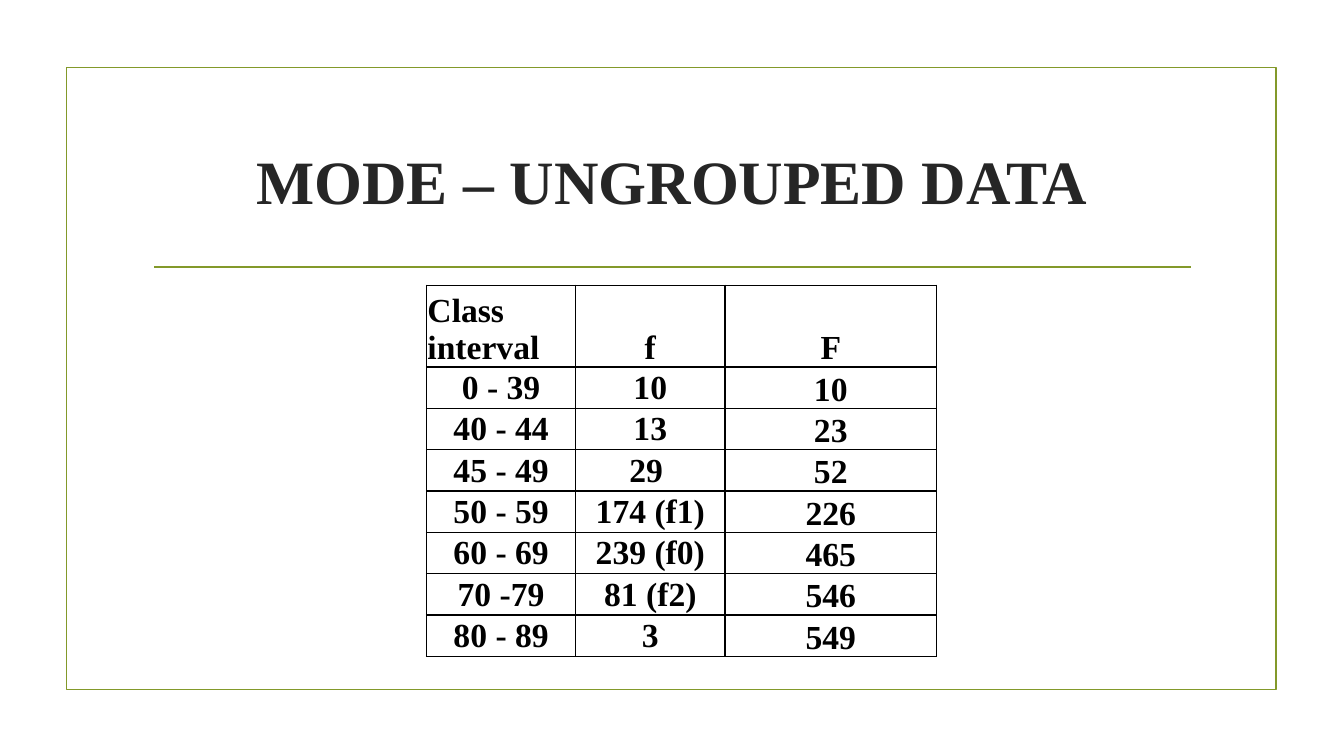
from dataclasses import dataclass

from lxml import etree
from pptx import Presentation
from pptx.dml.color import RGBColor
from pptx.enum.shapes import MSO_CONNECTOR, MSO_SHAPE
from pptx.enum.text import MSO_ANCHOR, PP_ALIGN
from pptx.oxml import parse_xml
from pptx.oxml.ns import nsdecls, qn
from pptx.util import Inches, Pt

RECT = MSO_SHAPE.RECTANGLE
STRAIGHT = MSO_CONNECTOR.STRAIGHT
MIDDLE, BOTTOM = MSO_ANCHOR.MIDDLE, MSO_ANCHOR.BOTTOM
LEFT, CENTER = PP_ALIGN.LEFT, PP_ALIGN.CENTER


@dataclass(frozen=True)
class Theme:
    font: str = "Times New Roman"
    accent: str = "83992A"
    title: str = "262626"
    ink: str = "000000"
    title_size: float = 44
    cell_size: float = 24
    rule_width: float = 1.25
    border_width: float = 1


HEADER = ("Class interval", "f", "F")
ROWS = (
    ("0 - 39", "10", "10"),
    ("40 - 44", "13", "23"),
    ("45 - 49", "29 ", "52"),
    ("50 - 59", "174 (f1)", "226"),
    ("60 - 69", "239 (f0)", "465"),
    ("70 -79", "81 (f2)", "546"),
    ("80 - 89", "3", "549"),
)
COLUMN_WIDTHS = (1.48, 1.48, 2.1)
HEADER_HEIGHT, ROW_HEIGHT = 0.81, 0.41


class SlideBuilder:
    def __init__(self, s, theme):
        self.s = s
        self.theme = theme

    def _line(self, line):
        line.color.rgb = RGBColor.from_string(self.theme.accent)
        line.width = Pt(self.theme.rule_width)

    def _text(self, p, text, size, color, align):
        p.text = text
        p.alignment = align
        p.font.name = self.theme.font
        p.font.size = Pt(size)
        p.font.bold = True
        p.font.color.rgb = RGBColor.from_string(color)

    def frame(self, x, y, w, h):
        sp = self.s.shapes.add_shape(RECT, Inches(x), Inches(y), Inches(w), Inches(h))
        sp.shadow.inherit = False
        sp.fill.background()
        self._line(sp.line)

    def rule(self, x1, x2, y):
        sp = self.s.shapes.add_connector(STRAIGHT, Inches(x1), Inches(y), Inches(x2), Inches(y))
        self._line(sp.line)
        etree.SubElement(sp._element.spPr, qn("a:effectLst"))

    def title(self, text, x, y, w, h):
        tf = self.s.shapes.add_textbox(Inches(x), Inches(y), Inches(w), Inches(h)).text_frame
        tf.word_wrap = True
        tf.vertical_anchor = MIDDLE
        self._text(tf.paragraphs[0], text, self.theme.title_size, self.theme.title, CENTER)

    def _borders(self, cell):
        """Outline all four sides; line elements must precede the cell fill."""
        tc_pr = cell._tc.get_or_add_tcPr()
        for i, side in enumerate("LRTB"):
            tc_pr.insert(i, parse_xml(
                f'<a:ln{side} {nsdecls("a")} w="{Pt(self.theme.border_width)}">'
                f'<a:solidFill><a:srgbClr val="{self.theme.ink}"/></a:solidFill>'
                f'</a:ln{side}>'))

    def _cell(self, cell, text, anchor, align):
        cell.fill.background()
        self._borders(cell)
        cell.margin_left = cell.margin_right = cell.margin_top = Inches(0.01)
        cell.margin_bottom = 0
        cell.vertical_anchor = anchor
        self._text(cell.text_frame.paragraphs[0], text, self.theme.cell_size,
                   self.theme.ink, align)

    def frequency_table(self, x, y):
        height = HEADER_HEIGHT + ROW_HEIGHT * len(ROWS)
        table = self.s.shapes.add_table(
            len(ROWS) + 1, len(HEADER), Inches(x), Inches(y),
            Inches(sum(COLUMN_WIDTHS)), Inches(height)).table
        table.first_row = table.horz_banding = False
        for column, width in zip(table.columns, COLUMN_WIDTHS):
            column.width = Inches(width)
        last = len(HEADER) - 1
        for r, values in enumerate((HEADER, *ROWS)):
            table.rows[r].height = Inches(ROW_HEIGHT if r else HEADER_HEIGHT)
            for c, text in enumerate(values):
                anchor = BOTTOM if r == 0 or c == last else MIDDLE
                align = LEFT if r == c == 0 else CENTER
                self._cell(table.cell(r, c), text, anchor, align)


def main():
    prs = Presentation()
    prs.slide_width, prs.slide_height = Inches(13.33), Inches(7.5)
    slide = SlideBuilder(prs.slides.add_slide(prs.slide_layouts[6]), Theme())
    slide.frame(0.66, 0.67, 12, 6.17)
    slide.rule(1.53, 11.81, 2.65)
    slide.title("MODE – UNGROUPED DATA", 1.42, 1.07, 10.5, 1.43)
    slide.frequency_table(4.23, 2.83)
    prs.save("out.pptx")


if __name__ == "__main__":
    main()
